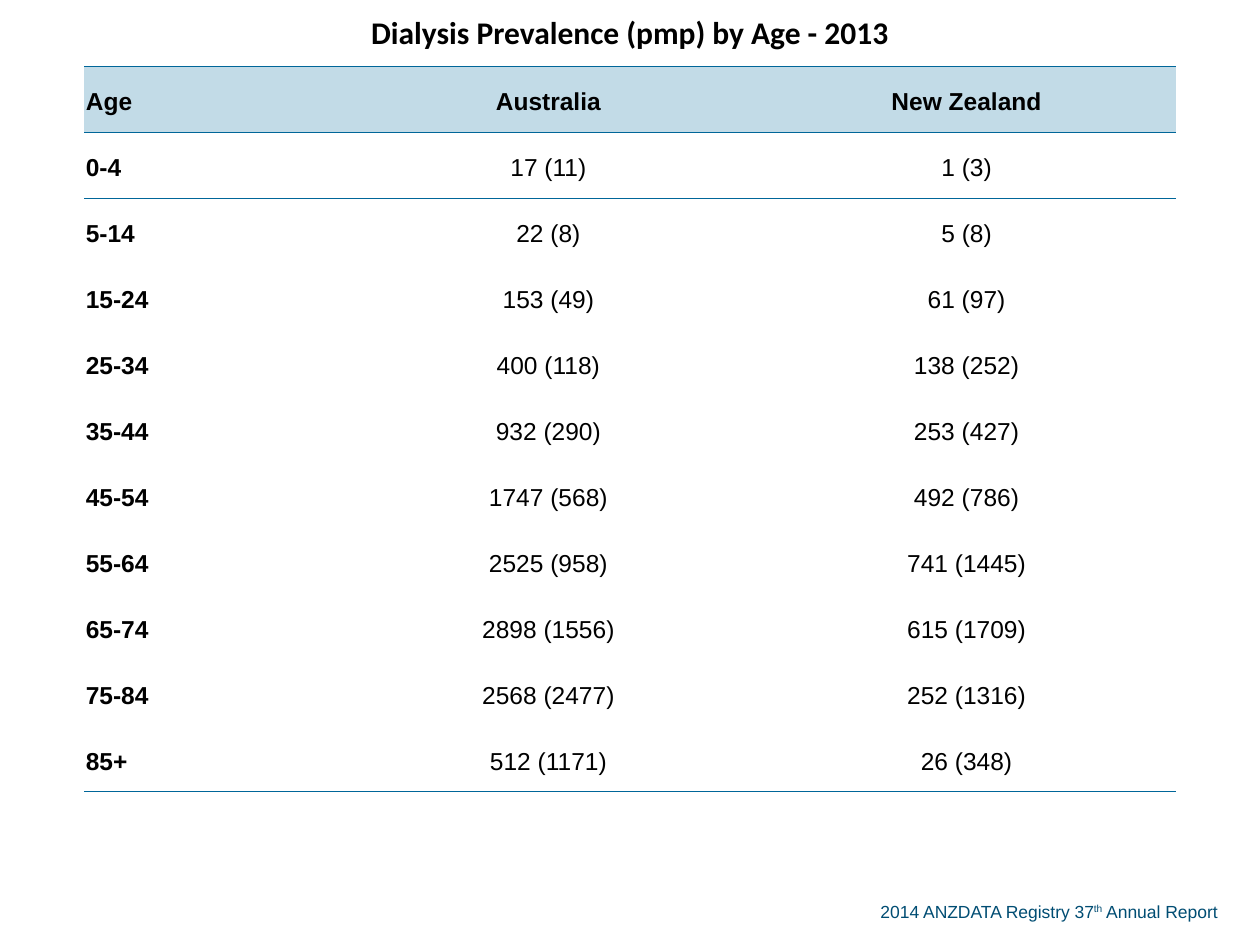
from dataclasses import dataclass

from lxml import etree
from pptx import Presentation
from pptx.dml.color import RGBColor
from pptx.enum.text import MSO_ANCHOR, MSO_AUTO_SIZE, PP_ALIGN
from pptx.oxml.ns import qn
from pptx.util import Cm, Pt

LEFT, CENTER = PP_ALIGN.LEFT, PP_ALIGN.CENTER
MIDDLE = MSO_ANCHOR.MIDDLE
GROW = MSO_AUTO_SIZE.SHAPE_TO_FIT_TEXT
PLAIN = "{2D5ABB26-0587-4C30-8999-92F81FD0307C}"

TITLE = "Dialysis Prevalence (pmp) by Age - 2013"
HEAD = ("Age", "Australia", "New Zealand")
ROWS = [
    ("0-4", "17 (11)", "1 (3)"),
    ("5-14", "22 (8)", "5 (8)"),
    ("15-24", "153 (49)", "61 (97)"),
    ("25-34", "400 (118)", "138 (252)"),
    ("35-44", "932 (290)", "253 (427)"),
    ("45-54", "1747 (568)", "492 (786)"),
    ("55-64", "2525 (958)", "741 (1445)"),
    ("65-74", "2898 (1556)", "615 (1709)"),
    ("75-84", "2568 (2477)", "252 (1316)"),
    ("85+", "512 (1171)", "26 (348)"),
]
SOURCE = (("2014 ANZDATA Registry 37", 0), ("th", 30000), (" Annual Report", 0))


@dataclass(frozen=True)
class Theme:
    """Colours, fonts and type sizes."""
    ink: str = "000000"
    band: str = "C2DBE7"
    rule: str = "006699"
    note: str = "004D73"
    head: str = "Calibri"
    body: str = "Arial"
    big: int = 18
    mid: int = 14
    small: int = 10


def apply(item, values):
    """Set each named value on the item."""
    for name, value in values.items():
        setattr(item, name, value)


class Deck:
    """Hold the theme and the current slide."""

    def __init__(self, theme, file):
        """Add a blank slide to the file."""
        self.theme = theme
        self.slide = file.slides.add_slide(file.slide_layouts[6])

    def style(self, font, name, size, color, bold=False):
        """Format a font."""
        apply(font, {"name": name, "size": Pt(size), "bold": bold})
        font.color.rgb = RGBColor.from_string(color)

    def border(self, cell, sides):
        """Draw a thin rule on each listed side."""
        for side in sides:
            line = etree.SubElement(cell._tc.get_or_add_tcPr(), qn(f"a:ln{side}"), w=str(Pt(0.5)))
            fill = etree.SubElement(line, qn("a:solidFill"))
            etree.SubElement(fill, qn("a:srgbClr"), val=self.theme.rule)

    def cell(self, cell, text, look, align, sides="", band=False):
        """Fill one table cell."""
        apply(cell, {
            "text": text, "vertical_anchor": MIDDLE, "margin_left": Cm(0.03),
            "margin_right": Cm(0.03), "margin_top": Cm(0.03), "margin_bottom": 0,
        })
        para = cell.text_frame.paragraphs[0]
        para.alignment = align
        self.style(para.runs[0].font, *look)
        self.border(cell, sides)
        if band:
            cell.fill.solid()
            cell.fill.fore_color.rgb = RGBColor.from_string(self.theme.band)
        else:
            cell.fill.background()
        return para

    def table(self, title, rows, left, top, widths, height):
        """Add a table with a title row and a banded head."""
        theme, count = self.theme, len(rows) + 1
        frame = self.slide.shapes.add_table(
            count, len(widths), Cm(left), Cm(top), Cm(sum(widths)), Cm(height * count))
        grid = frame.table
        apply(grid, {"first_row": False, "horz_banding": False})
        grid._tbl.tblPr.find(qn("a:tableStyleId")).text = PLAIN
        for col, width in zip(grid.columns, widths):
            col.width = Cm(width)
        for row in grid.rows:
            row.height = Cm(height)
        grid.cell(0, 0).merge(grid.cell(0, len(widths) - 1))
        self.cell(grid.cell(0, 0), title, (theme.head, theme.big, theme.ink, True), CENTER, "B")
        edges = {1: "TB", 2: "T", count - 1: "B"}
        for r, row in enumerate(rows, 1):
            for c, text in enumerate(row):
                look = (theme.body, theme.mid, theme.ink, r == 1 or c == 0)
                para = self.cell(grid.cell(r, c), text, look,
                                 CENTER if c else LEFT, edges.get(r, ""), r == 1)
                apply(para, {"line_spacing": 1.19, "space_after": Pt(14)})

    def note(self, parts, left, top, width, height):
        """Add a source line with raised parts."""
        box = self.slide.shapes.add_textbox(Cm(left), Cm(top), Cm(width), Cm(height))
        apply(box.text_frame, {"word_wrap": True, "auto_size": GROW})
        para = box.text_frame.paragraphs[0]
        for text, rise in parts:
            run = para.add_run()
            run.text = text
            self.style(run.font, self.theme.body, self.theme.small, self.theme.note)
            if rise:
                run._r.get_or_add_rPr().set("baseline", str(rise))


def main():
    """Build and save the slide."""
    file = Presentation()
    apply(file, {"slide_width": Cm(25.4), "slide_height": Cm(19.05)})
    deck = Deck(Theme(), file)
    deck.note(SOURCE, 17.5, 18.03, 7.6, 0.69)
    deck.table(TITLE, [HEAD, *ROWS], 1.7, 0, (5.14, 8.43, 8.43), 1.33)
    file.save("out.pptx")


if __name__ == "__main__":
    main()
